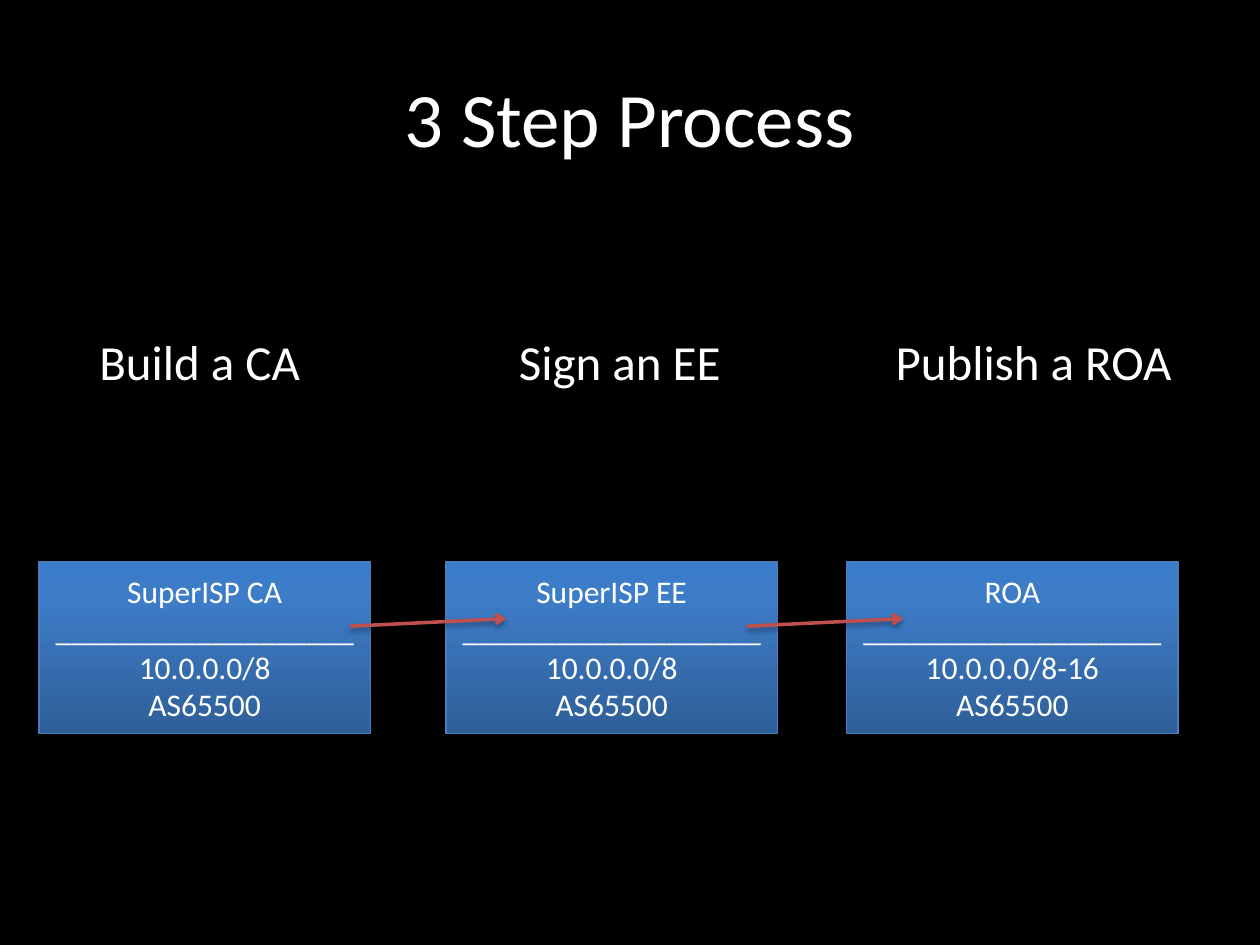
import copy
from dataclasses import dataclass

import pptx
import pptx.dml.color
import pptx.enum.shapes
import pptx.enum.text
import pptx.oxml
import pptx.oxml.ns
import pptx.util

Inches = pptx.util.Inches
Pt = pptx.util.Pt
Align = pptx.enum.text.PP_ALIGN
Anchor = pptx.enum.text.MSO_ANCHOR
qn = pptx.oxml.ns.qn


@dataclass(frozen=True)
class Theme:
    font: str = "Calibri"
    back: str = "000000"
    ink: str = "FFFFFF"
    edge: str = "4B7EBC"
    arrow: str = "C0504D"
    ramp: tuple = ((0, "2F5F99"), (0.8, "3D7CC7"), (1, "3A7CCB"))
    title: int = 44
    head: int = 28
    body: int = 18


THEME = Theme()
WIDE, HIGH = 10, 7.5
BOX_W, BOX_H, BOX_TOP = 2.63, 1.36, 4.46
HEAD_TOP, HEAD_H = 2.58, 0.57
RULE = "_" * 19

# Each step: box left, heading left, heading width, heading, name, prefix
STEPS = (
    (0.31, 0.69, 1.81, "Build a CA", "SuperISP CA", "10.0.0.0/8"),
    (3.54, 4.02, 1.82, "Sign an EE", "SuperISP EE", "10.0.0.0/8"),
    (6.72, 7.01, 2.42, "Publish a ROA", "ROA", "10.0.0.0/8-16"),
)
ORIGIN = "AS65500"

# Both arrows share one shape, a fixed pitch apart
ARROW_X, ARROW_RUN, ARROW_PITCH = 2.78, 1.24, 3.15
ARROW_Y, ARROW_END = 4.97, 4.91


def paint(code):
    return pptx.dml.color.RGBColor.from_string(code)


def write(frame, lines, size, align=None):
    frame.text = "\n".join(lines)
    for para in frame.paragraphs:
        para.alignment = align
        para.font.name = THEME.font
        para.font.size = Pt(size)
        para.font.color.rgb = paint(THEME.ink)


def shade(part, alpha, dist):
    """Cast a soft black shadow straight down."""
    props = part._element.spPr
    for old in props.findall(qn("a:effectLst")):
        props.remove(old)
    props.append(pptx.oxml.parse_xml(
        f'<a:effectLst {pptx.oxml.ns.nsdecls("a")}>'
        f'<a:outerShdw blurRad="{Pt(3.1)}" dist="{Pt(dist)}" dir="5400000" rotWithShape="0">'
        f'<a:srgbClr val="000000"><a:alpha val="{alpha * 1000}"/></a:srgbClr>'
        '</a:outerShdw></a:effectLst>'))


def blend(fill):
    """Fill with the theme's ramp, running from bottom to top."""
    fill.gradient()
    fill.gradient_angle = 90
    stops = fill._fill._gradFill.find(qn("a:gsLst"))
    stops.append(copy.deepcopy(stops[-1]))
    for stop, (place, code) in zip(fill.gradient_stops, THEME.ramp):
        stop.position = place
        stop.color.rgb = paint(code)


def add_text(slide, place, text, size, align=None, wrap=False):
    box = slide.shapes.add_textbox(*map(Inches, place))
    frame = box.text_frame
    frame.word_wrap = wrap
    frame.vertical_anchor = Anchor.MIDDLE if wrap else Anchor.TOP
    write(frame, [text], size, align)


def add_box(slide, left, lines):
    place = map(Inches, (left, BOX_TOP, BOX_W, BOX_H))
    box = slide.shapes.add_shape(pptx.enum.shapes.MSO_SHAPE.RECTANGLE, *place)
    blend(box.fill)
    box.line.color.rgb = paint(THEME.edge)
    box.line.width = Pt(0.75)
    shade(box, 35, 1.8)
    box.text_frame.vertical_anchor = Anchor.MIDDLE
    write(box.text_frame, lines, THEME.body, Align.CENTER)


def add_arrow(slide, left):
    ends = map(Inches, (left, ARROW_Y, left + ARROW_RUN, ARROW_END))
    arrow = slide.shapes.add_connector(pptx.enum.shapes.MSO_CONNECTOR.STRAIGHT, *ends)
    arrow.line.color.rgb = paint(THEME.arrow)
    arrow.line.width = Pt(2)
    line = arrow._element.spPr.find(qn("a:ln"))
    line.append(pptx.oxml.parse_xml(
        f'<a:tailEnd {pptx.oxml.ns.nsdecls("a")} type="arrow"/>'))
    shade(arrow, 38, 1.6)


def main():
    deck = pptx.Presentation()
    deck.slide_width, deck.slide_height = Inches(WIDE), Inches(HIGH)
    slide = deck.slides.add_slide(deck.slide_layouts[6])
    slide.background.fill.solid()
    slide.background.fill.fore_color.rgb = paint(THEME.back)

    # Records, then the arrows that lie over them
    for left, _, _, _, name, prefix in STEPS:
        add_box(slide, left, [name, RULE, prefix, ORIGIN])
    for step in range(len(STEPS) - 1):
        add_arrow(slide, ARROW_X + step * ARROW_PITCH)

    # Step headings
    for _, left, width, head, _, _ in STEPS:
        add_text(slide, (left, HEAD_TOP, width, HEAD_H), head, THEME.head)

    # Title
    place = (0.05 * WIDE, 0.04 * HIGH, 0.9 * WIDE, HIGH / 6)
    add_text(slide, place, "3 Step Process", THEME.title, Align.CENTER, wrap=True)

    deck.save("out.pptx")


if __name__ == "__main__":
    main()
